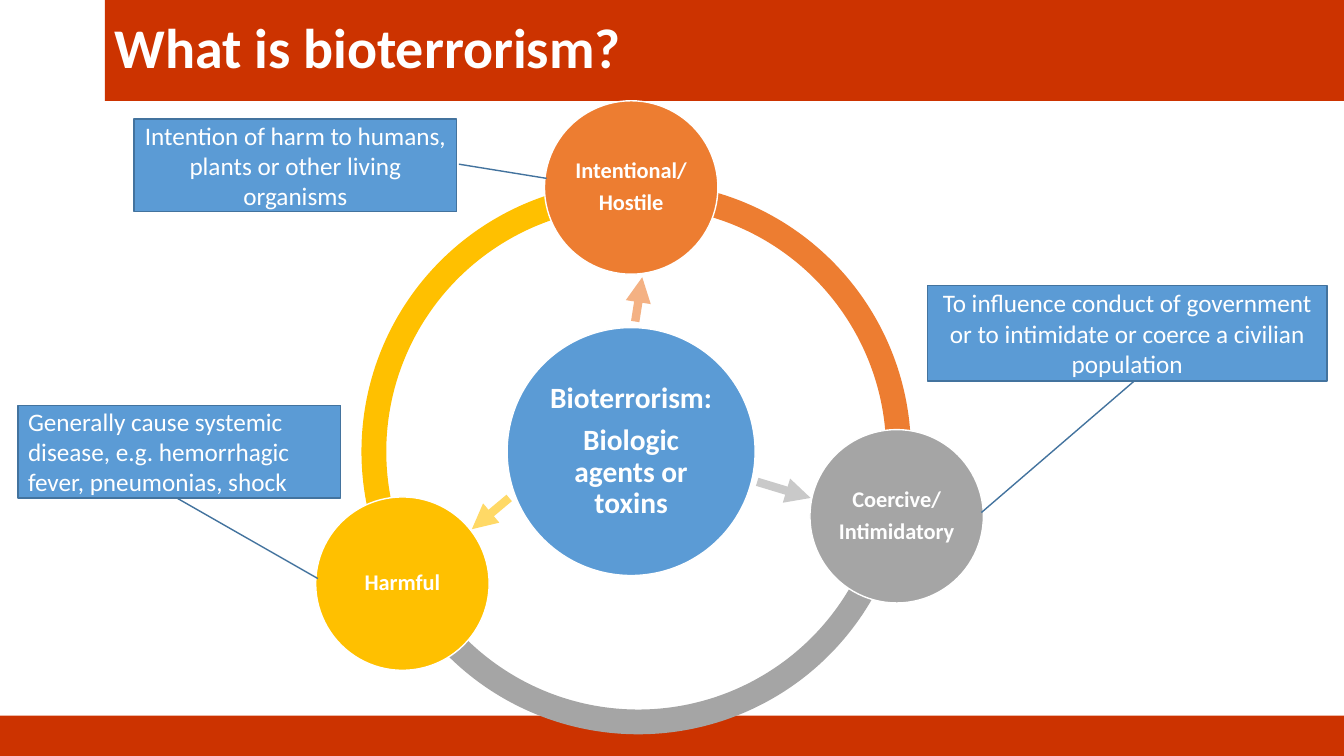
from math import cos, radians, sin

from lxml import etree
from pptx import Presentation
from pptx.dml.color import RGBColor
from pptx.enum.shapes import MSO_CONNECTOR, MSO_SHAPE
from pptx.enum.text import MSO_ANCHOR, MSO_AUTO_SIZE, PP_ALIGN
from pptx.oxml.ns import qn
from pptx.util import Inches, Pt

LEFT, CENTER = PP_ALIGN.LEFT, PP_ALIGN.CENTER
MIDDLE = MSO_ANCHOR.MIDDLE
STRAIGHT = MSO_CONNECTOR.STRAIGHT
RECTANGLE, OVAL = MSO_SHAPE.RECTANGLE, MSO_SHAPE.OVAL
ARC, CALLOUT = MSO_SHAPE.BLOCK_ARC, MSO_SHAPE.LINE_CALLOUT_1

# Content: lengths are columns and rows of a one-inch grid
WIDTH, HEIGHT = 13.33, 7.5
RED, WHITE, BLUE, NAVY = "CC3300", "FFFFFF", "5B9BD5", "43739E"
ORANGE, GRAY, YELLOW = "ED7D31", "A5A5A5", "FFC000"
TITLE = "What is bioterrorism?"
TITLE_LEFT, TITLE_HEIGHT, FOOTER_HEIGHT = 1.04, 1, 0.4

HUB = (6.26, 4.48)
HUB_SIZE, NODE_SIZE, ARC_SIZE, ARC_THICKNESS = 2.46, 1.72, 5.35, 0.046
HUB_TEXT = ["Bioterrorism:", "Biologic agents or toxins"]
# Text, angle in degrees and distance from the hub, colour
NODES = [
    (["Intentional/", "Hostile"], 270, 2.62, ORANGE),
    (["Coercive/", "Intimidatory"], 13.7, 2.71, GRAY),
    (["Harmful"], 150, 2.62, YELLOW),
]
# Shift from the hub, start and end angle in degrees, colour
ARCS = [
    ((0, 0), 150, 270, YELLOW),
    ((0.07, 0.13), 11.36, 153.2, GRAY),
    ((0.1, 0), 267.83, 14.29, ORANGE),
]
# Text, box, leader line (y, x, y, x as shares of the box), alignment
CALLOUTS = [
    ("Intention of harm to humans, plants or other living organisms",
     (1.33, 1.18, 3.2, 0.92), (0.488, 1.007, 0.641, 1.279), CENTER),
    ("To influence conduct of government or to intimidate or coerce a civilian population",
     (9.2, 2.83, 3.96, 0.95), (1.003, 0.517, 2.373, 0.135), CENTER),
    ("Generally cause systemic disease, e.g. hemorrhagic fever, pneumonias, shock",
     (0.18, 4.02, 3.2, 0.92), (1.003, 0.493, 1.869, 0.929), LEFT),
]
ARROWS = [
    ((7.51, 4.78), (8.04, 4.94), "C9C9C9"),
    ((5.05, 4.94), (4.68, 5.25), "FFD966"),
    ((6.3, 3.19), (6.37, 2.75), "F4B183"),
]


def color(value):
    return RGBColor.from_string(value)


def set_all(target, values):
    for name, value in values.items():
        setattr(target, name, value)


def write(shape, lines, size, bold=False, align=CENTER, spacing=1.0, gap=0, inset=None):
    frame = shape.text_frame
    set_all(frame, {"word_wrap": True, "auto_size": MSO_AUTO_SIZE.NONE,
                    "vertical_anchor": MIDDLE})
    if inset is not None:
        for side in ("left", "top", "right", "bottom"):
            setattr(frame, f"margin_{side}", Inches(inset))
    frame.text = "\n".join(lines)
    for paragraph in frame.paragraphs:
        set_all(paragraph, {"alignment": align, "line_spacing": spacing,
                            "space_before": Pt(0), "space_after": Pt(0)})
        set_all(paragraph.font, {"name": "Calibri", "size": Pt(size), "bold": bold})
        paragraph.font.color.rgb = color(WHITE)
    for paragraph in frame.paragraphs[:-1]:
        paragraph.space_after = Pt(gap * size)


def add_shape(kind, box, fill, line=None, adjustments=()):
    shape = slide.shapes.add_shape(kind, *map(Inches, box))
    shape.shadow.inherit = False
    shape.fill.solid()
    shape.fill.fore_color.rgb = color(fill)
    if line:
        shape.line.color.rgb = color(line)
        shape.line.width = Pt(1)
    else:
        shape.line.fill.background()
    for index, value in enumerate(adjustments):
        shape.adjustments[index] = value
    return shape


def square(center, size):
    return center[0] - size / 2, center[1] - size / 2, size, size


def add_circle(center, size, fill, lines, text_size, inset):
    circle = add_shape(OVAL, square(center, size), fill, WHITE)
    write(circle, lines, text_size, bold=True, spacing=0.9, gap=0.35, inset=inset)


def add_arrow(start, end, line_color):
    arrow = slide.shapes.add_connector(STRAIGHT, *map(Inches, start + end))
    arrow.line.color.rgb = color(line_color)
    arrow.line.width = Pt(6)
    etree.SubElement(arrow.line._get_or_add_ln(), qn("a:tailEnd"), type="triangle")
    etree.SubElement(arrow._element.spPr, qn("a:effectLst"))


presentation = Presentation()
presentation.slide_width = Inches(WIDTH)
presentation.slide_height = Inches(HEIGHT)
slide = presentation.slides.add_slide(presentation.slide_layouts[5])

# Title and footer bars
title = slide.shapes.title
set_all(title, {"left": Inches(TITLE_LEFT), "top": 0,
                "width": Inches(WIDTH - TITLE_LEFT), "height": Inches(TITLE_HEIGHT)})
title.fill.solid()
title.fill.fore_color.rgb = color(RED)
write(title, [TITLE], 40, bold=True, align=LEFT, spacing=0.9)
add_shape(RECTANGLE, (0, HEIGHT - FOOTER_HEIGHT, WIDTH, FOOTER_HEIGHT), RED)

# Ring: adjustments count 0.6 per degree
for (shift_x, shift_y), start, end, fill in ARCS:
    center = (HUB[0] + shift_x, HUB[1] + shift_y)
    add_shape(ARC, square(center, ARC_SIZE), fill,
              adjustments=(start * 0.6, end * 0.6, ARC_THICKNESS))

# Hub and the circles around it
add_circle(HUB, HUB_SIZE, BLUE, HUB_TEXT, 21, 0.03)
for lines, angle, distance, fill in NODES:
    center = (HUB[0] + distance * cos(radians(angle)),
              HUB[1] + distance * sin(radians(angle)))
    add_circle(center, NODE_SIZE, fill, lines, 16, 0.02)

# Explanations
for text, box, leader, align in CALLOUTS:
    write(add_shape(CALLOUT, box, BLUE, NAVY, leader), [text], 18, align=align)

# Arrows from the hub
for start, end, line_color in ARROWS:
    add_arrow(start, end, line_color)

presentation.save("out.pptx")
